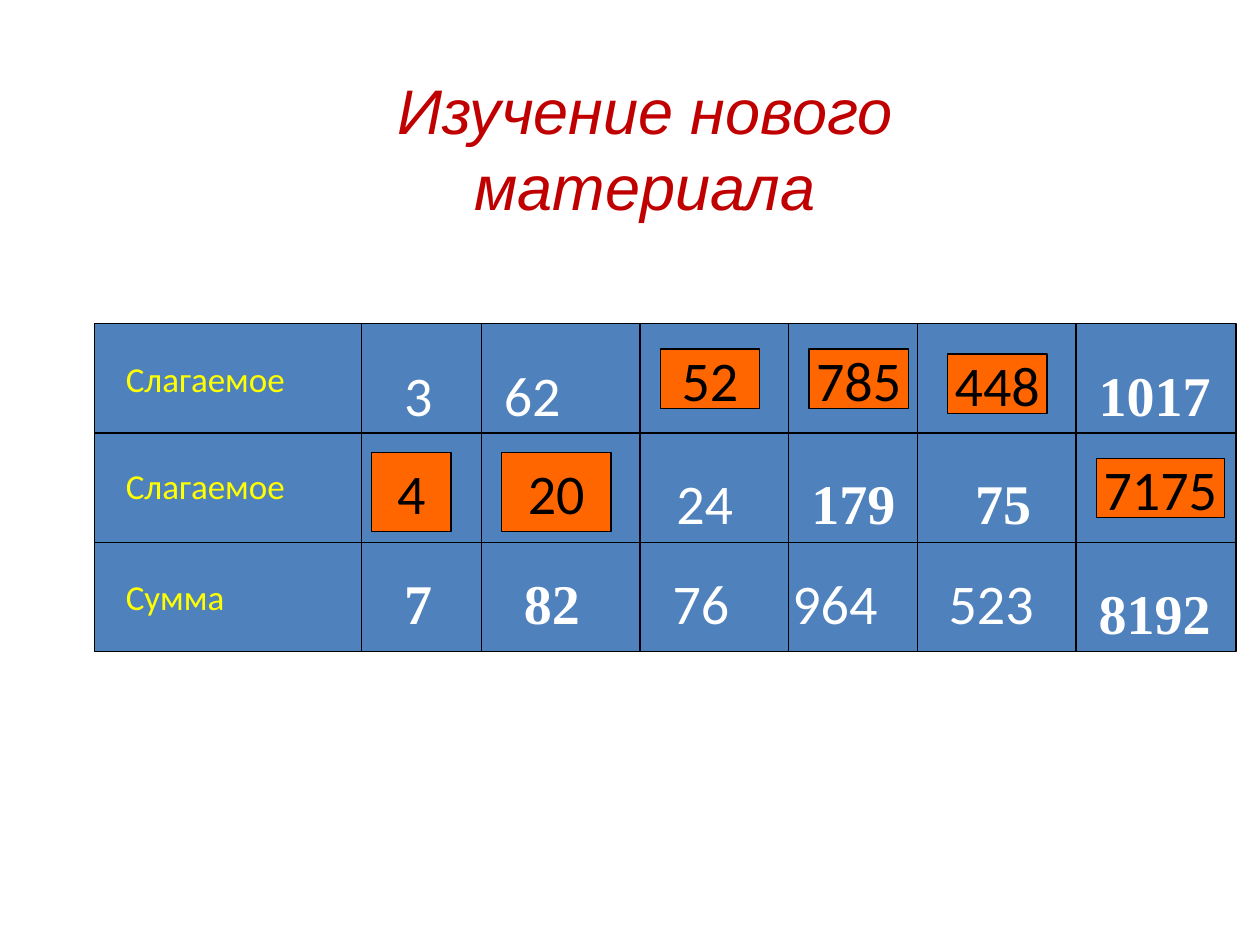
from lxml.etree import SubElement
from pptx import Presentation
from pptx.dml.color import RGBColor
from pptx.enum.shapes import MSO_CONNECTOR, MSO_SHAPE
from pptx.enum.text import MSO_ANCHOR, PP_ALIGN
from pptx.oxml.ns import qn
from pptx.util import Inches, Pt

BLACK = RGBColor(0, 0, 0)
WHITE = RGBColor(255, 255, 255)
BLUE = RGBColor(0x4F, 0x81, 0xBD)
ORANGE = RGBColor(0xFF, 0x66, 0x00)
YELLOW = RGBColor(0xFF, 0xFF, 0x00)
RED = RGBColor(0xC0, 0, 0)

TITLE = "Изучение нового материала"
LEFT, TOP, WIDTH, HEIGHT = 0.75, 2.57, 9.06, 2.6
COLS = [2.87, 3.82, 5.08, 6.26, 7.28, 8.54]
ROWS = 3

# text, top
LABELS = [("Слагаемое", 2.79), ("Слагаемое", 3.64), ("Сумма", 4.52)]
# text, left, top, width
GIVEN = [
    ("3", 3.11, 2.81, 0.6), ("62", 3.9, 2.81, 0.9), ("24", 5.27, 3.67, 0.9),
    ("76", 5.24, 4.46, 0.9), ("964", 6.19, 4.46, 1.05), ("523", 7.43, 4.46, 1.05),
]
BOLD = [
    ("7", 3.11, 4.46, 0.6), ("82", 4.06, 4.46, 0.88), ("179", 6.34, 3.67, 1.18),
    ("75", 7.64, 3.67, 0.8), ("8192", 8.62, 4.54, 1.38), ("1017", 8.62, 2.81, 1.38),
]
# text, left, top, width, height
ANSWERS = [
    ("4", 2.95, 3.59, 0.63, 0.63), ("20", 3.98, 3.59, 0.87, 0.63),
    ("52", 5.24, 2.77, 0.79, 0.47), ("785", 6.42, 2.77, 0.79, 0.47),
    ("448", 7.52, 2.81, 0.79, 0.47), ("7175", 8.7, 3.64, 1.02, 0.47),
]

deck = Presentation()
deck.slide_width, deck.slide_height = Inches(10), Inches(7.5)
slide = deck.slides.add_slide(deck.slide_layouts[6])
shapes = slide.shapes


def write(shape, text, size, color, face="Calibri", bold=False, italic=False):
    para = shape.text_frame.paragraphs[0]
    run = para.add_run()
    run.text = text
    font = run.font
    font.name, font.size, font.bold, font.italic = face, Pt(size), bold, italic
    font.color.rgb = color
    return para


def add_text(x, y, w, h, *style, wrap=True, **more):
    box = shapes.add_textbox(Inches(x), Inches(y), Inches(w), Inches(h))
    box.text_frame.word_wrap = wrap
    return write(box, *style, **more)


def add_rect(x, y, w, h, color):
    rect = shapes.add_shape(MSO_SHAPE.RECTANGLE, Inches(x), Inches(y), Inches(w), Inches(h))
    rect.shadow.inherit = False
    rect.fill.solid()
    rect.fill.fore_color.rgb = color
    rect.line.color.rgb = BLACK
    rect.line.width = Pt(0.75)
    return rect


def add_line(x1, y1, x2, y2):
    line = shapes.add_connector(
        MSO_CONNECTOR.STRAIGHT, Inches(x1), Inches(y1), Inches(x2), Inches(y2))
    line.line.color.rgb = BLACK
    line.line.width = Pt(0.75)
    SubElement(line._element.spPr, qn("a:effectLst"))


add_rect(LEFT, TOP, WIDTH, HEIGHT, BLUE)
for x in COLS:
    add_line(x, TOP, x, TOP + HEIGHT)
for i in range(1, ROWS):
    y = TOP + HEIGHT * i / ROWS
    add_line(LEFT, y, LEFT + WIDTH, y)

for text, y in LABELS:
    add_text(0.9, y, 1.81, 0.43, text, 20, YELLOW)
for text, x, y, w in GIVEN:
    add_text(x, y, w, 0.64, text, 32, WHITE)
for text, x, y, w, h in ANSWERS:
    card = add_rect(x, y, w, h, ORANGE)
    card.text_frame.word_wrap = False
    card.text_frame.vertical_anchor = MSO_ANCHOR.MIDDLE
    write(card, text, 32, BLACK).alignment = PP_ALIGN.CENTER
title = add_text(1.85, 0.52, 6.54, 0.95, TITLE, 36, RED, "Arial", wrap=False, italic=True)
title.alignment = PP_ALIGN.CENTER
for text, x, y, w in BOLD:
    add_text(x, y, w, 0.64, text, 32, WHITE, "Times New Roman", bold=True)

deck.save("out.pptx")
